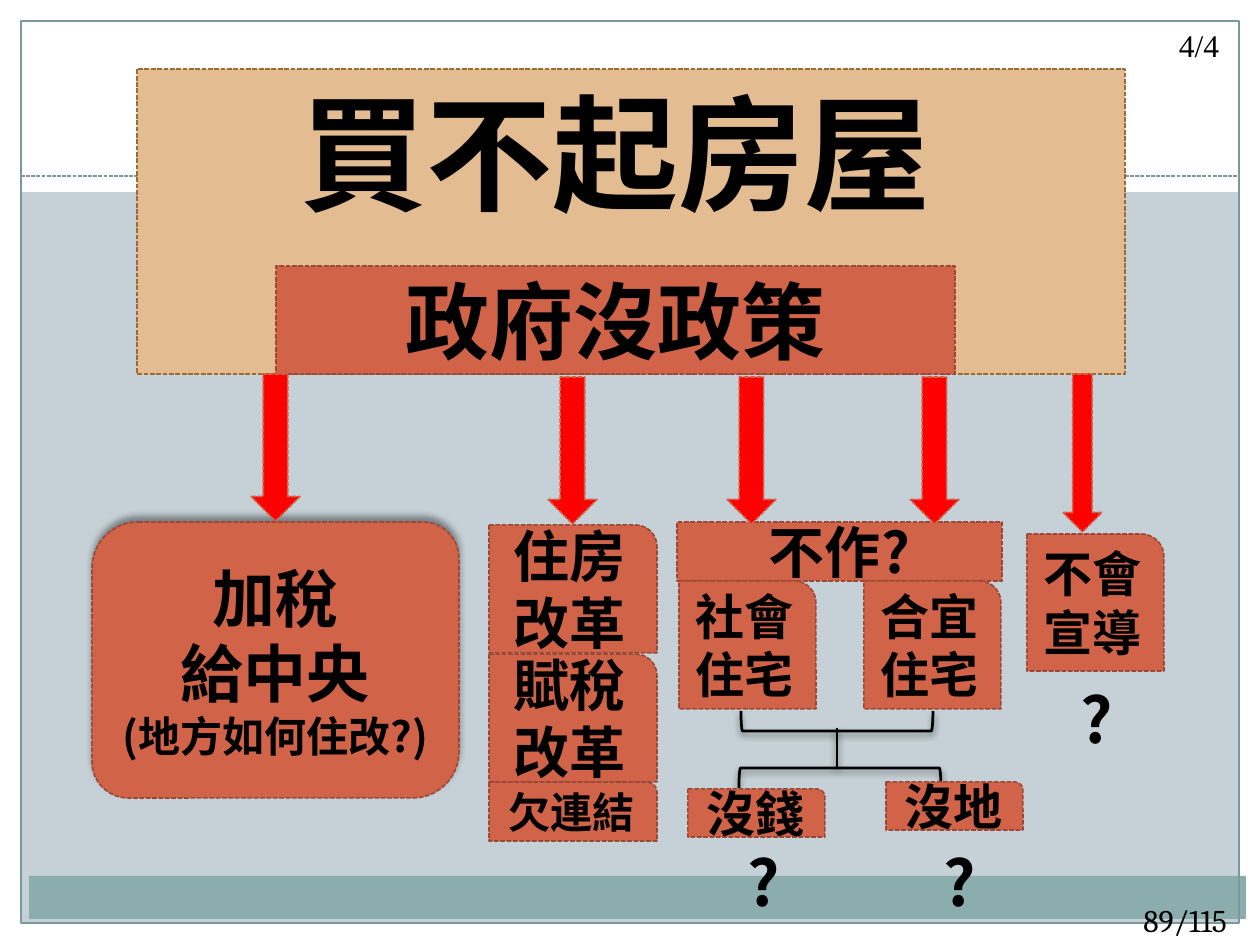
from lxml.etree import SubElement
from pptx import Presentation
from pptx.dml.color import RGBColor
from pptx.enum.dml import MSO_LINE
from pptx.enum.shapes import MSO_CONNECTOR, MSO_SHAPE
from pptx.enum.text import MSO_ANCHOR, PP_ALIGN
from pptx.oxml.ns import qn
from pptx.util import Emu, Pt

PX = 914400 / 126
CJK = "Noto Sans CJK SC"
RED, BROWN, BLACK, TEAL = "D16349", "9B4936", "000000", "7C999A"
RECT, ROUND1 = MSO_SHAPE.RECTANGLE, MSO_SHAPE.ROUND_1_RECTANGLE

# Content: (left, top, width, height) in px
MARGINS = [(0, 924, 1260, 21), (0, 0, 1260, 192), (0, 0, 21, 945), (1239, 0, 21, 945)]
FOOTER_BAND = (29, 876, 1217, 43)
FRAME = (21, 21, 1218, 902)
PROBLEM = (137, 69, 988, 305)
TAX = (92, 522, 367, 276)
TAX_LINES = [("加稅", 36), ("給中央", 36), ("(地方如何住改?)", 24)]

# Red boxes: preset, place, lines, size
BOXES = [
    (RECT, (276, 266, 679, 108), ["政府沒政策"], 48),
    (ROUND1, (489, 525, 168, 128), ["住房", "改革"], 32),
    (ROUND1, (489, 654, 168, 128), ["賦稅", "改革"], 32),
    (ROUND1, (489, 782, 168, 59), ["欠連結"], 24),
    (RECT, (677, 522, 325, 59), ["不作?"], 32),
    (ROUND1, (1027, 534, 137, 137), ["不會", "宣導"], 28),
    (ROUND1, (679, 581, 137, 128), ["社會", "住宅"], 28),
    (ROUND1, (864, 581, 137, 128), ["合宜", "住宅"], 28),
    (ROUND1, (688, 789, 137, 48), ["沒錢"], 28),
    (ROUND1, (886, 782, 137, 48), ["沒地"], 28),
]
ARROWS = [(251, 374, 49, 147), (548, 377, 49, 147), (727, 377, 49, 147),
          (910, 377, 49, 147), (1063, 374, 39, 158)]
BRACKETS = [((827, 625, 20, 192), False), ((830, 677, 20, 202), True)]

# Free text: place, text, size, font, bold, alignment, wrap
LABELS = [
    ((168, 69, 896, 165), "買不起房屋", 72, CJK, True, PP_ALIGN.CENTER, True),
    *[((x, y, 57, 89), "?", 36, CJK, True, PP_ALIGN.LEFT, False)
      for x, y in [(735, 837), (931, 837), (1068, 674)]],
    ((1166, 20, 66, 50), "4/4", 18, "Times New Roman", False, PP_ALIGN.CENTER, False),
    ((1131, 895, 147, 50), "89/115", 18, "Cambria", False, PP_ALIGN.LEFT, True),
]


def emu(*lengths):
    return [Emu(round(n * PX)) for n in lengths]


def rgb(value):
    return RGBColor.from_string(value)


def style_line(line, color, width, dashed):
    line.color.rgb = rgb(color)
    line.width = Pt(width)
    if dashed:
        line.dash_style = MSO_LINE.SQUARE_DOT


def add_shadow(shape, alpha, distance, direction):
    effects = shape._element.spPr.find(qn("a:effectLst"))
    if effects is None:
        effects = SubElement(shape._element.spPr, qn("a:effectLst"))
    shadow = SubElement(effects, qn("a:outerShdw"), blurRad=str(Pt(4)),
                        dist=str(Pt(distance)), dir=str(direction * 60000),
                        algn="ctr", rotWithShape="0")
    color = SubElement(shadow, qn("a:srgbClr"), val=BLACK)
    SubElement(color, qn("a:alpha"), val=str(alpha * 1000))


def add_shape(preset, place, fill=None, line=None, width=0.9, dashed=True):
    shape = slide.shapes.add_shape(preset, *emu(*place))
    shape.shadow.inherit = False
    if fill:
        shape.fill.solid()
        shape.fill.fore_color.rgb = rgb(fill)
    else:
        shape.fill.background()
    if line:
        style_line(shape.line, line, width, dashed)
    else:
        shape.line.fill.background()
    return shape


def add_line(x1, y1, x2, y2, color, width, dashed):
    line = slide.shapes.add_connector(MSO_CONNECTOR.STRAIGHT, *emu(x1, y1, x2, y2))
    style_line(line.line, color, width, dashed)
    SubElement(line._element.spPr, qn("a:effectLst"))
    return line


def write(shape, lines, font=CJK, bold=True, align=PP_ALIGN.CENTER,
          anchor=MSO_ANCHOR.MIDDLE, wrap=True):
    frame = shape.text_frame
    frame.word_wrap = wrap
    frame.vertical_anchor = anchor
    for i, (text, size) in enumerate(lines):
        paragraph = frame.add_paragraph() if i else frame.paragraphs[0]
        paragraph.alignment = align
        run = paragraph.add_run()
        run.text = text
        for name, value in {"size": Pt(size), "bold": bold, "name": font}.items():
            setattr(run.font, name, value)
        run.font.color.rgb = rgb(BLACK)
        SubElement(run._r.get_or_add_rPr(), qn("a:ea"), typeface=font)


prs = Presentation()
prs.slide_width, prs.slide_height = emu(1260, 945)
slide = prs.slides.add_slide(prs.slide_layouts[6])
slide.background.fill.solid()
slide.background.fill.fore_color.rgb = rgb("C5D1D7")

# Page frame
for margin in MARGINS:
    add_shape(RECT, margin, "FFFFFF")
add_shape(RECT, FOOTER_BAND, "8CADAE")
add_shape(RECT, FRAME, None, TEAL, 0.75, False)
add_line(21, 176, 1239, 176, TEAL, 0.75, True)

# Problem panel and tax box
add_shape(RECT, PROBLEM, "E3BC92", "9B6B36")
tax = add_shape(MSO_SHAPE.ROUND_2_DIAG_RECTANGLE, TAX, RED, BROWN)
tax.adjustments[0], tax.adjustments[1] = 0.167, 0.131
add_shadow(tax, 40, 3, 270)
write(tax, TAX_LINES)

# Brackets joining the housing boxes to their obstacles
for place, flipped in BRACKETS:
    bracket = add_shape(MSO_SHAPE.LEFT_BRACKET, place, None, BLACK, 1.57, False)
    bracket.rotation = 270
    if flipped:
        bracket._element.spPr.xfrm.set("flipH", "1")
    add_shadow(bracket, 45, 2, 90)
stem = add_line(837, 728, 837, 767, BLACK, 1.57, False)
add_shadow(stem, 45, 2, 90)

# Red boxes
for preset, place, lines, size in BOXES:
    write(add_shape(preset, place, RED, BROWN), [(text, size) for text in lines])

# Arrows
for place in ARROWS:
    add_shape(MSO_SHAPE.DOWN_ARROW, place, "FF0000", RED)

# Title, question marks and page numbers
for place, text, size, font, bold, align, wrap in LABELS:
    write(slide.shapes.add_textbox(*emu(*place)), [(text, size)], font, bold,
          align, MSO_ANCHOR.TOP, wrap)

prs.save("out.pptx")
